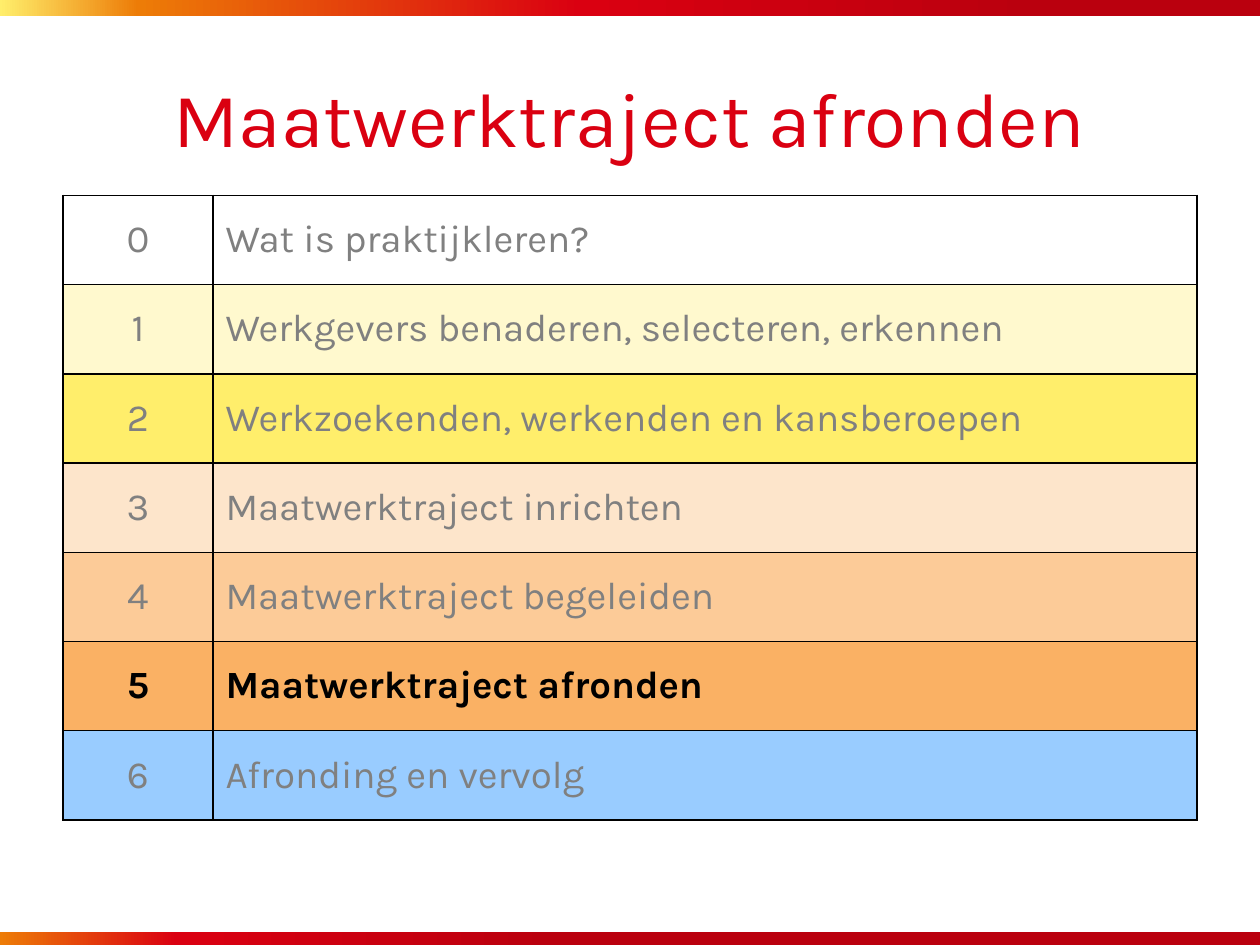
from dataclasses import dataclass
from typing import Optional

from lxml.etree import SubElement
from pptx import Presentation
from pptx.dml.color import RGBColor
from pptx.enum.shapes import MSO_SHAPE
from pptx.enum.text import MSO_ANCHOR, PP_ALIGN
from pptx.oxml.ns import qn
from pptx.util import Inches, Pt

FONT = "Karla"
BLACK = RGBColor(0x00, 0x00, 0x00)
GRAY = RGBColor(0x80, 0x80, 0x80)
DARK_RED = RGBColor(0xBA, 0x00, 0x0E)
RED = RGBColor(0xDA, 0x00, 0x11)
ORANGE = RGBColor(0xED, 0x7C, 0x07)
YELLOW = RGBColor(0xFF, 0xEE, 0x6B)
PALE_YELLOW = RGBColor(0xFF, 0xF9, 0xCE)
PALE_ORANGE = RGBColor(0xFD, 0xE5, 0xCB)
LIGHT_ORANGE = RGBColor(0xFC, 0xCB, 0x98)
MID_ORANGE = RGBColor(0xFA, 0xB1, 0x64)
BLUE = RGBColor(0x99, 0xCC, 0xFF)


@dataclass
class Bar:
    top: float
    stops: list[tuple[int, RGBColor]]


@dataclass
class Chapter:
    title: str
    fill: Optional[RGBColor]
    current: bool = False


BARS = [
    Bar(0, [(18, DARK_RED), (54, RED), (89, ORANGE), (100, YELLOW)]),
    Bar(7.4, [(56, DARK_RED), (86, RED), (100, ORANGE)]),
]
CHAPTERS = [
    Chapter("Wat is praktijkleren?", None),
    Chapter("Werkgevers benaderen, selecteren, erkennen", PALE_YELLOW),
    Chapter("Werkzoekenden, werkenden en kansberoepen", YELLOW),
    Chapter("Maatwerktraject inrichten", PALE_ORANGE),
    Chapter("Maatwerktraject begeleiden", LIGHT_ORANGE),
    Chapter("Maatwerktraject afronden", MID_ORANGE, current=True),
    Chapter("Afronding en vervolg", BLUE),
]
COLUMN_WIDTHS = (1.19, 7.81)
ROW_HEIGHT = 4.96 / len(CHAPTERS)


def add_run(paragraph, text: str, size: int, color: RGBColor, bold: bool = False) -> None:
    run = paragraph.add_run()
    run.text = text
    run.font.name = FONT
    run.font.size = Pt(size)
    run.font.bold = bold
    run.font.color.rgb = color


def add_bar(slide, bar: Bar) -> None:
    shape = slide.shapes.add_shape(
        MSO_SHAPE.RECTANGLE, 0, Inches(bar.top), Inches(10.02), Inches(0.13))
    shape.shadow.inherit = False
    shape.line.fill.background()
    shape.fill.gradient()
    shape.fill.gradient_angle = 180
    # More than two colour stops need XML
    stop_list = shape._element.spPr.find(qn("a:gradFill")).find(qn("a:gsLst"))
    for old_stop in list(stop_list):
        stop_list.remove(old_stop)
    for position, color in bar.stops:
        stop = SubElement(stop_list, qn("a:gs"), pos=str(position * 1000))
        SubElement(stop, qn("a:srgbClr"), val=str(color))


def set_borders(cell) -> None:
    properties = cell._tc.get_or_add_tcPr()
    for index, side in enumerate(("lnL", "lnR", "lnT", "lnB")):
        line = SubElement(properties, qn(f"a:{side}"), w=str(Pt(1)))
        fill = SubElement(line, qn("a:solidFill"))
        SubElement(fill, qn("a:srgbClr"), val=str(BLACK))
        properties.insert(index, line)  # borders come before the fill


def fill_cell(cell, text: str, chapter: Chapter, alignment: PP_ALIGN) -> None:
    cell.vertical_anchor = MSO_ANCHOR.MIDDLE
    if chapter.fill is None:
        cell.fill.background()
    else:
        cell.fill.solid()
        cell.fill.fore_color.rgb = chapter.fill
    set_borders(cell)
    paragraph = cell.text_frame.paragraphs[0]
    paragraph.alignment = alignment
    add_run(paragraph, text, 22, BLACK if chapter.current else GRAY, chapter.current)


def add_chapter_table(slide) -> None:
    table = slide.shapes.add_table(
        len(CHAPTERS), len(COLUMN_WIDTHS), Inches(0.5), Inches(1.55),
        Inches(sum(COLUMN_WIDTHS)), Inches(ROW_HEIGHT * len(CHAPTERS))).table
    table.first_row = False
    table.horz_banding = False
    for column, width in zip(table.columns, COLUMN_WIDTHS):
        column.width = Inches(width)
    for number, chapter in enumerate(CHAPTERS):
        table.rows[number].height = Inches(ROW_HEIGHT)
        fill_cell(table.cell(number, 0), str(number), chapter, PP_ALIGN.CENTER)
        fill_cell(table.cell(number, 1), chapter.title, chapter, PP_ALIGN.LEFT)


def main() -> None:
    presentation = Presentation()
    presentation.slide_width = Inches(10)
    presentation.slide_height = Inches(7.5)
    slide = presentation.slides.add_slide(presentation.slide_layouts[5])

    # Gradient bars along the top and bottom edges
    for bar in BARS:
        add_bar(slide, bar)

    # Title
    title = slide.shapes.title
    title.left, title.top = Inches(0.5), Inches(0.3)
    title.width, title.height = Inches(9), Inches(1.25)
    title.text_frame.vertical_anchor = MSO_ANCHOR.MIDDLE
    paragraph = title.text_frame.paragraphs[0]
    paragraph.alignment = PP_ALIGN.CENTER
    add_run(paragraph, "Maatwerktraject afronden", 44, RED)

    # Chapter overview
    add_chapter_table(slide)

    presentation.save("out.pptx")


if __name__ == "__main__":
    main()
